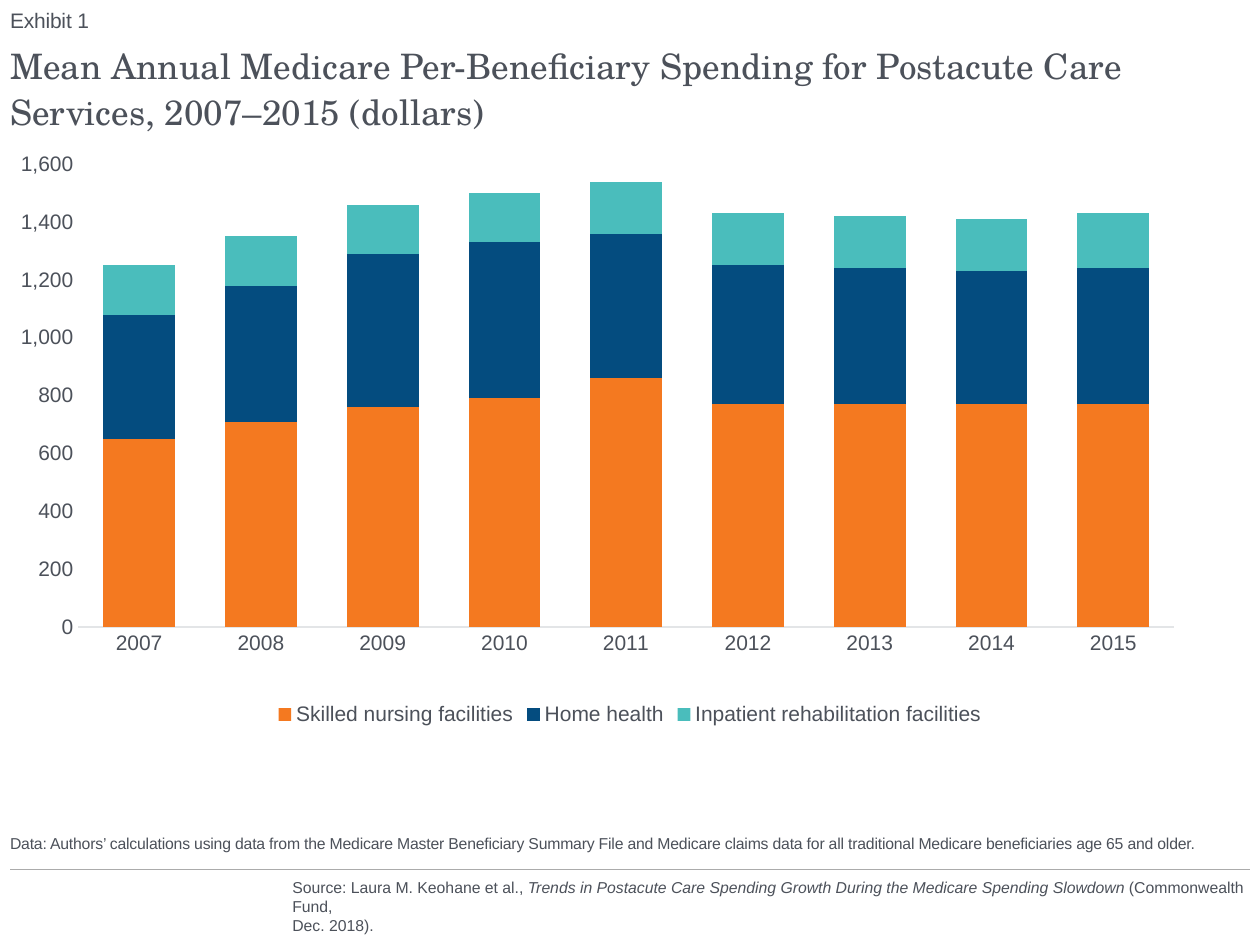
from lxml import etree
from pptx import Presentation
from pptx.chart.data import CategoryChartData
from pptx.dml.color import RGBColor
from pptx.enum.chart import XL_CHART_TYPE as ChartType
from pptx.enum.chart import XL_LEGEND_POSITION as LegendPos
from pptx.enum.chart import XL_TICK_MARK as Tick
from pptx.enum.shapes import MSO_CONNECTOR as Connector
from pptx.enum.text import MSO_ANCHOR as Anchor
from pptx.oxml import parse_xml
from pptx.oxml.ns import nsdecls, qn
from pptx.util import Inches, Pt

INK = RGBColor(0x4C, 0x51, 0x5A)
RULE = RGBColor(0xAB, 0xAB, 0xAB)
AXIS = RGBColor(0xE3, 0xE5, 0xE7)
WHITE = RGBColor(0xFF, 0xFF, 0xFF)
ORANGE = RGBColor(0xF4, 0x79, 0x20)
NAVY = RGBColor(0x04, 0x4C, 0x7F)
TEAL = RGBColor(0x4A, 0xBD, 0xBC)

SANS, SERIF = "Arial", "TeX Gyre Schola"
LEFT, WIDTH = 0.08, 9.84

YEARS = [str(year) for year in range(2007, 2016)]
SPENDING = [
    ("Skilled nursing facilities", ORANGE,
     [650, 710, 760, 790, 860, 770, 770, 770, 770]),
    ("Home health", NAVY,
     [430, 470, 530, 540, 500, 480, 470, 460, 470]),
    ("Inpatient rehabilitation facilities", TEAL,
     [170, 170, 170, 170, 180, 180, 180, 180, 190]),
]


def style_font(font, size, name=SANS):
    font.size = Pt(size)
    font.name = name
    font.color.rgb = INK


def add_text(s, box, lines, size, font=SANS, anchor=Anchor.BOTTOM,
             line_spacing=None, tracking=None):
    """Each line is a list of (text, italic) runs; lines share one paragraph."""
    tf = s.shapes.add_textbox(*map(Inches, box)).text_frame
    tf.word_wrap = True
    tf.vertical_anchor = anchor
    tf.margin_left = tf.margin_right = tf.margin_top = tf.margin_bottom = 0
    p = tf.paragraphs[0]
    p.line_spacing = line_spacing
    for i, line in enumerate(lines):
        if i:
            p.add_line_break()
        for text, italic in line:
            r = p.add_run()
            r.text = text
            style_font(r.font, size, font)
            r.font.italic = italic
            if tracking is not None:
                r.font._element.set("spc", str(round(tracking * 100)))


def add_heading(s, x, y, w):
    add_text(s, (x, y, w, 0.25), [[("Exhibit 1", False)]], 12, tracking=-0.1)
    title = ("Mean Annual Medicare Per-Beneficiary Spending for Postacute Care "
             "Services, 2007–2015 (dollars)")
    add_text(s, (x, y + 0.31, w, 0.83), [[(title, False)]], 20, font=SERIF,
             anchor=Anchor.TOP, line_spacing=1.1)


def set_plot_area(chart, x, y, w, h):
    """Fix the inner plot area, in fractions of the chart."""
    layout = parse_xml(
        f'<c:layout {nsdecls("c")}><c:manualLayout>'
        '<c:layoutTarget val="inner"/><c:xMode val="edge"/><c:yMode val="edge"/>'
        f'<c:x val="{x}"/><c:y val="{y}"/><c:w val="{w}"/><c:h val="{h}"/>'
        '</c:manualLayout></c:layout>')
    plot_area = chart._chartSpace.chart.plotArea
    for old in plot_area.findall(qn("c:layout")):
        plot_area.remove(old)
    plot_area.insert(0, layout)


def add_spending_chart(s, box):
    data = CategoryChartData(number_format="#,##0")
    data.categories = YEARS
    for name, _, values in SPENDING:
        data.add_series(name, values)
    chart = s.shapes.add_chart(ChartType.COLUMN_STACKED, *map(Inches, box),
                               data).chart
    style_font(chart.font, 10)
    chart.has_title = False
    set_plot_area(chart, 0.055, 0.033, 0.884, 0.79)

    plot = chart.plots[0]
    plot.gap_width, plot.overlap = 70, 100
    plot.vary_by_categories = False
    for series, (_, color, _) in zip(plot.series, SPENDING):
        series.format.fill.solid()
        series.format.fill.fore_color.rgb = color

    years, dollars = chart.category_axis, chart.value_axis
    for axis in (years, dollars):
        axis.major_tick_mark = axis.minor_tick_mark = Tick.NONE
        axis.has_major_gridlines = False
        style_font(axis.tick_labels.font, 12)
    years.format.line.color.rgb = AXIS
    years.format.line.width = Pt(0.75)
    dollars.format.line.fill.background()
    dollars.minimum_scale, dollars.maximum_scale = 0, 1600
    dollars.major_unit = 200
    dollars.tick_labels.number_format = "#,##0"
    dollars.tick_labels.number_format_is_linked = False

    chart.has_legend = True
    chart.legend.position = LegendPos.BOTTOM
    chart.legend.include_in_layout = False
    style_font(chart.legend.font, 12)


def add_footer(s, x, y, w):
    note = ("Data: Authors’ calculations using data from the Medicare Master "
            "Beneficiary Summary File and Medicare claims data for all "
            "traditional Medicare beneficiaries age 65 and older.")
    add_text(s, (x, y, w, 0.54), [[(note, False)]], 9, tracking=-0.1)

    rule_y = Inches(y + 0.67)
    rule = s.shapes.add_connector(Connector.STRAIGHT, Inches(x), rule_y,
                                  Inches(x + w), rule_y)
    rule.line.color.rgb = RULE
    rule.line.width = Pt(0.75)
    etree.SubElement(rule._element.spPr, qn("a:effectLst"))

    source = [
        [("Source: Laura M. Keohane et al., ", False),
         ("Trends in Postacute Care Spending Growth During the Medicare "
          "Spending Slowdown ", True),
         ("(Commonwealth Fund, ", False)],
        [("Dec. 2018).", False)],
    ]
    add_text(s, (x + 2.24, y + 0.74, w - 2.24, 0.45), source, 9,
             anchor=Anchor.MIDDLE)


def main():
    prs = Presentation()
    prs.slide_width, prs.slide_height = Inches(10), Inches(7.5)
    s = prs.slides.add_slide(prs.slide_layouts[6])
    s.background.fill.solid()
    s.background.fill.fore_color.rgb = WHITE
    add_heading(s, LEFT, 0.01, WIDTH)
    add_spending_chart(s, (LEFT, 1.15, WIDTH, 4.65))
    add_footer(s, LEFT, 6.23, WIDTH)
    prs.save("out.pptx")


if __name__ == "__main__":
    main()
